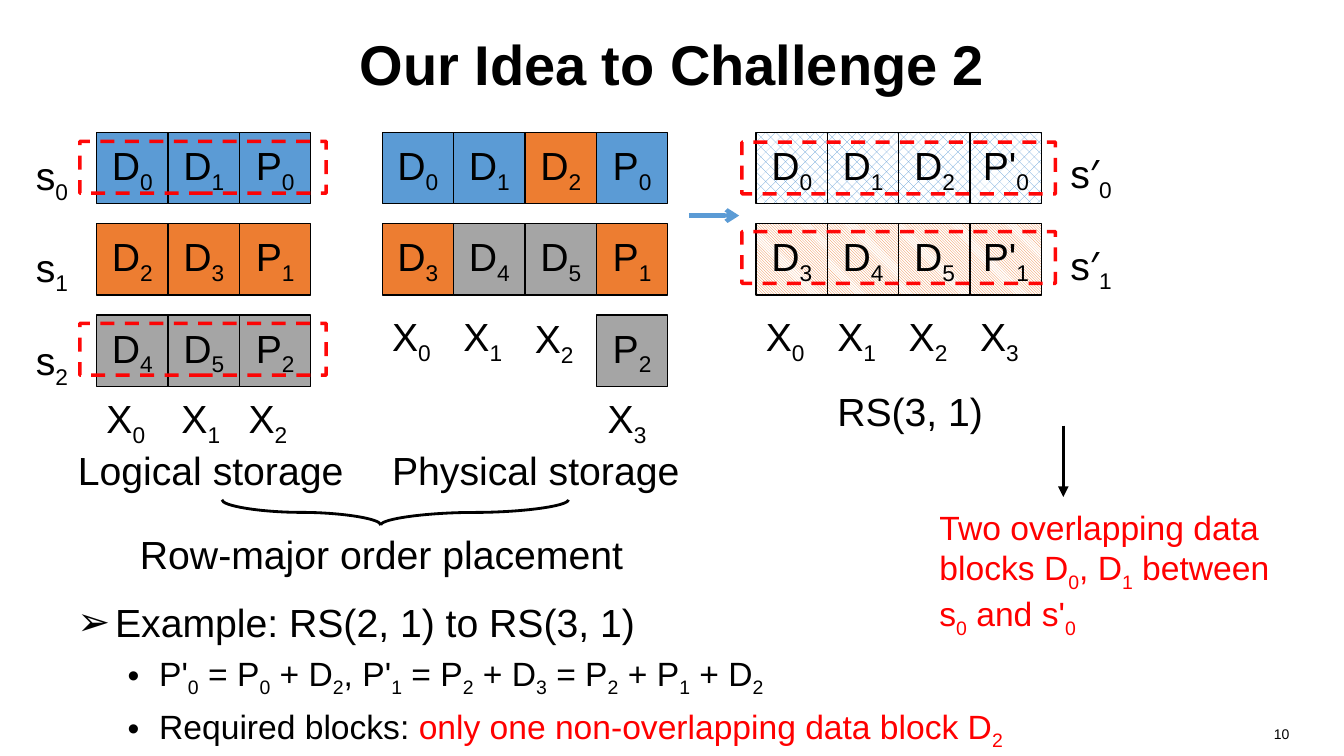
from dataclasses import dataclass
from typing import Optional

from lxml.etree import SubElement
from pptx import Presentation
from pptx.dml.color import RGBColor
from pptx.enum.dml import MSO_LINE, MSO_PATTERN
from pptx.enum.shapes import MSO_CONNECTOR, MSO_SHAPE
from pptx.enum.text import MSO_ANCHOR, MSO_AUTO_SIZE, PP_ALIGN
from pptx.oxml.ns import qn
from pptx.util import Pt

BLACK = RGBColor(0x00, 0x00, 0x00)
WHITE = RGBColor(0xFF, 0xFF, 0xFF)
RED = RGBColor(0xFF, 0x00, 0x00)
BLUE = RGBColor(0x5B, 0x9B, 0xD5)
ORANGE = RGBColor(0xED, 0x7D, 0x31)
GRAY = RGBColor(0xA5, 0xA5, 0xA5)

# Block grid, in points
BLOCK = 51
FIRST_ROW, ROW_STEP = 94.5, 65.25
LOGICAL, PHYSICAL, RESCALED = 69, 273, 540


@dataclass
class Paint:
    color: RGBColor
    pattern: Optional[MSO_PATTERN] = None


@dataclass
class Stripe:
    left: float
    row: int
    blocks: str
    paints: list[Paint]


@dataclass
class Label:
    text: str
    left: float
    top: float
    width: float = 72
    align: PP_ALIGN = PP_ALIGN.LEFT
    size: float = 28
    color: RGBColor = BLACK
    height: float = 41


B, O, G = Paint(BLUE), Paint(ORANGE), Paint(GRAY)
CROSSED = Paint(BLUE, MSO_PATTERN.PERCENT_30)
HATCHED = Paint(ORANGE, MSO_PATTERN.LIGHT_DOWNWARD_DIAGONAL)

STRIPES = [
    Stripe(LOGICAL, 0, "D_0 D_1 P_0", [B] * 3),
    Stripe(LOGICAL, 1, "D_2 D_3 P_1", [O] * 3),
    Stripe(LOGICAL, 2, "D_4 D_5 P_2", [G] * 3),
    Stripe(PHYSICAL, 0, "D_0 D_1 D_2 P_0", [B, B, O, B]),
    Stripe(PHYSICAL, 1, "D_3 D_4 D_5 P_1", [O, G, G, O]),
    Stripe(PHYSICAL + 3 * BLOCK, 2, "P_2", [G]),
    Stripe(RESCALED, 0, "D_0 D_1 D_2 Pʹ_0", [CROSSED] * 4),
    Stripe(RESCALED, 1, "D_3 D_4 D_5 Pʹ_1", [HATCHED] * 4),
]
LABELS = [
    # Storage nodes
    Label("X_0", LOGICAL, 278), Label("X_1", 122.5, 278), Label("X_2", 170.5, 278),
    Label("X_0", PHYSICAL, 219.5), Label("X_1", PHYSICAL + BLOCK, 219.5),
    Label("X_2", PHYSICAL + 2 * BLOCK, 221), Label("X_3", 427, 278),
    *(Label(f"X_{node}", RESCALED + node * BLOCK, 219.5) for node in range(4)),
    # Stripe names
    Label("s_0", 18.5, 104.5, 48), Label("s_1", 18.5, 170, 48), Label("s_2", 18.5, 237, 48),
    # Captions
    Label("Logical storage", 48.5, 315.5, 220),
    Label("Physical storage", PHYSICAL, 315.5, 268),
    Label("RS(3, 1)", 591, 273, 153),
    Label("Row-major order placement", 69, 375, 407, PP_ALIGN.CENTER),
    Label("Two overlapping data blocks D_0, D_1 between s_0 and s'_0",
          664, 358.5, 263.5, size=24, color=RED, height=94),
    Label("10", 704, 515, 224, PP_ALIGN.RIGHT, size=10, height=25),
]


def write(paragraph, text: str, *, size: float = 28, color: RGBColor = BLACK,
          font: str = "Arial", bold: bool = False) -> None:
    """Append text; the character after each underscore becomes a subscript."""
    plain, *parts = text.split("_")
    pieces = [(plain, False)]
    for part in parts:
        pieces += [(part[0], True), (part[1:], False)]
    for piece, lowered in pieces:
        if not piece:
            continue
        run = paragraph.add_run()
        run.text = piece
        run.font.size, run.font.name, run.font.bold = Pt(size), font, bold
        run.font.color.rgb = color
        if lowered:
            run.font._element.set("baseline", "-25000")


def place(shape, left: float, top: float, width: float, height: float) -> None:
    shape.left, shape.top, shape.width, shape.height = map(Pt, (left, top, width, height))


def add_label(slide, label: Label):
    box = slide.shapes.add_textbox(*map(Pt, (label.left, label.top, label.width, label.height)))
    box.text_frame.word_wrap = True
    paragraph = box.text_frame.paragraphs[0]
    paragraph.alignment = label.align
    write(paragraph, label.text, size=label.size, color=label.color)
    return paragraph


def add_rectangle(slide, left: float, top: float, width: float, height: float,
                  color: RGBColor, weight: float):
    shape = slide.shapes.add_shape(MSO_SHAPE.RECTANGLE, *map(Pt, (left, top, width, height)))
    shape.shadow.inherit = False
    shape.line.color.rgb, shape.line.width = color, Pt(weight)
    return shape


def add_stripe(slide, stripe: Stripe) -> None:
    top = FIRST_ROW + stripe.row * ROW_STEP
    for column, (name, paint) in enumerate(zip(stripe.blocks.split(), stripe.paints)):
        block = add_rectangle(slide, stripe.left + column * BLOCK, top, BLOCK, BLOCK, BLACK, 1)
        if paint.pattern is None:
            block.fill.solid()
        else:
            block.fill.patterned()
            block.fill.pattern = paint.pattern
            block.fill.back_color.rgb = WHITE
        block.fill.fore_color.rgb = paint.color
        block.text_frame.word_wrap = False
        block.text_frame.vertical_anchor = MSO_ANCHOR.MIDDLE
        paragraph = block.text_frame.paragraphs[0]
        paragraph.alignment = PP_ALIGN.CENTER
        write(paragraph, name)


def add_dashed_frame(slide, left: float, top: float, width: float) -> None:
    frame = add_rectangle(slide, left, top, width, 37, RED, 2.5)
    frame.fill.background()
    frame.line.dash_style = MSO_LINE.DASH
    color = frame.line._ln.find(".//" + qn("a:srgbClr"))
    SubElement(color, qn("a:alpha"), val="97000")


def add_line(slide, kind: MSO_CONNECTOR, start: tuple[float, float], end: tuple[float, float],
             color: RGBColor, weight: float, head: Optional[str] = None):
    line = slide.shapes.add_connector(kind, *map(Pt, (*start, *end)))
    line.line.color.rgb, line.line.width = color, Pt(weight)
    if head:
        SubElement(line.line._ln, qn("a:tailEnd"), type=head)
    SubElement(line._element.spPr, qn("a:effectLst"))
    return line


def add_brace_half(slide, tip: float, end: float) -> None:
    middle_x, middle_y, reach = (tip + end) / 2, 366, (end - tip) / 2
    curve = add_line(slide, MSO_CONNECTOR.CURVE, (middle_x - 9, middle_y - reach),
                     (middle_x + 9, middle_y + reach), BLACK, 2)
    curve._element.spPr.find(qn("a:xfrm")).set("rot", "16200000")


def add_bullet(paragraph, mark: str, margin: float, hanging: float, before: float) -> None:
    paragraph.space_before = Pt(before)
    properties = paragraph._p.get_or_add_pPr()
    properties.set("marL", str(Pt(margin)))
    properties.set("indent", str(-Pt(hanging)))
    SubElement(properties, qn("a:buFont"), typeface="Arial")
    SubElement(properties, qn("a:buChar"), char=mark)


def main() -> None:
    deck = Presentation()
    deck.slide_width, deck.slide_height = Pt(960), Pt(540)
    slide = deck.slides.add_slide(deck.slide_layouts[1])

    # Title
    title, body = slide.placeholders
    place(title, 48, 0, 864, 90)
    title.text_frame.vertical_anchor = MSO_ANCHOR.MIDDLE
    write(title.text_frame.paragraphs[0], "Our Idea to Challenge 2", size=40, bold=True)

    # Example list
    place(body, 48, 424, 864, 104)
    body.text_frame.auto_size = MSO_AUTO_SIZE.NONE
    example = body.text_frame.paragraphs[0]
    write(example, "Example: RS(2, 1) to RS(3, 1)")
    add_bullet(example, "➢", 27, 27, 0)
    parity, required = (body.text_frame.add_paragraph() for _ in range(2))
    write(parity, "P'_0 = P_0 + D_2, P'_1 = P_2 + D_3 = P_2 + P_1 + D_2", size=24)
    write(required, "Required blocks: ", size=24)
    write(required, "only one non-overlapping data block D_2", size=24, color=RED)
    for detail in (parity, required):
        detail.level = 1
        add_bullet(detail, "•", 58.5, 22.5, 5)

    # Blocks and labels
    for stripe in STRIPES:
        add_stripe(slide, stripe)
    for label in LABELS:
        add_label(slide, label)
    for index, top in enumerate((103, 168.5)):
        name = add_label(slide, Label("s", 757.5, top, 65.5))
        write(name, "′", font="Calibri")
        write(name, f"_{index}")

    # Frames around the compared stripes
    for left, top, width in ((57, 101, 176), (57, 231, 176), (530, 101.5, 224), (530, 165.5, 224)):
        add_dashed_frame(slide, left, top, width)

    # Arrows and brace
    add_line(slide, MSO_CONNECTOR.STRAIGHT, (492, 154), (528, 154), BLUE, 3, "arrow")
    add_line(slide, MSO_CONNECTOR.STRAIGHT, (759.5, 304), (759.5, 355), BLACK, 2.5, "triangle")
    for end in (158.5, 406):
        add_brace_half(slide, 272, end)

    deck.save("out.pptx")


if __name__ == "__main__":
    main()
